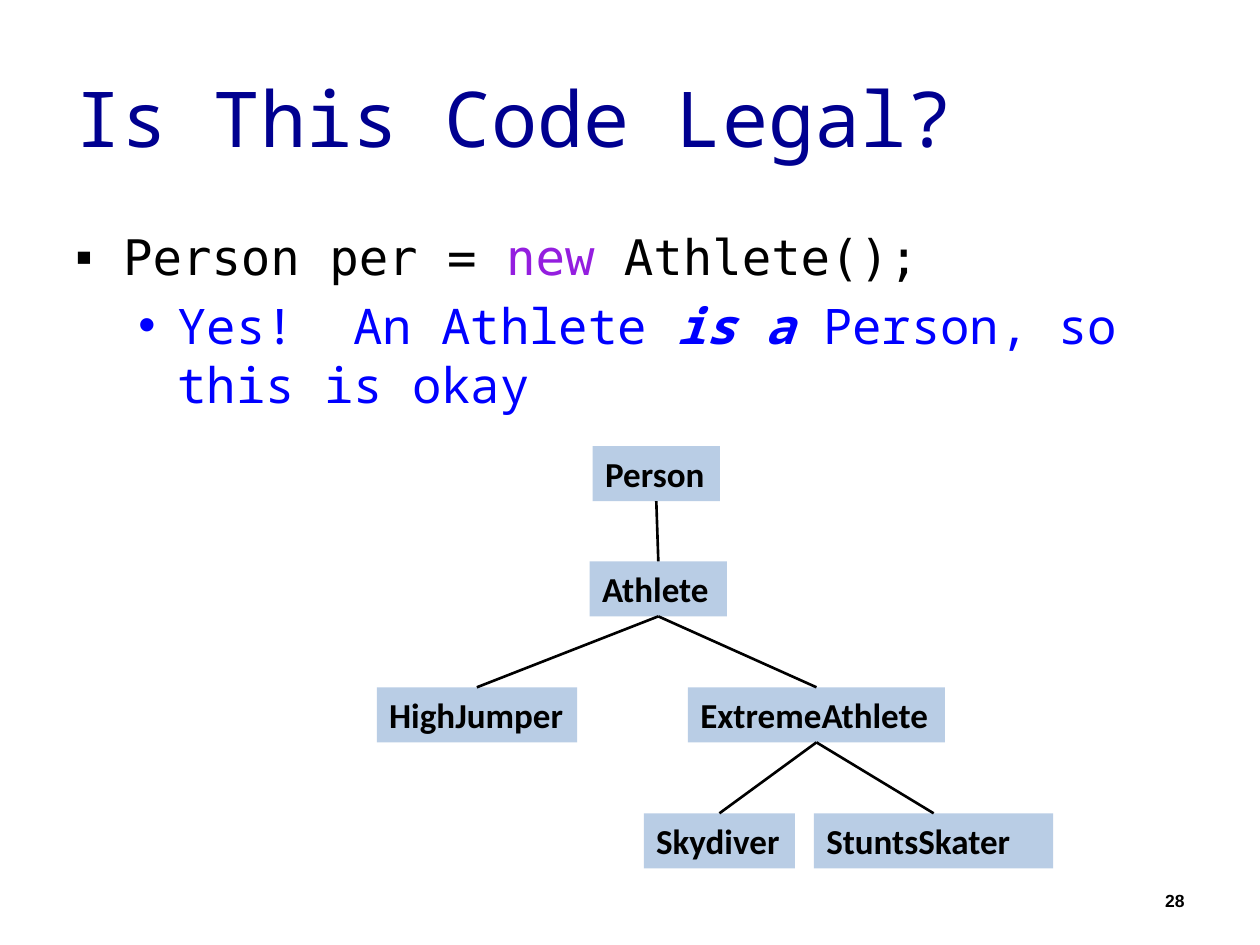
from typing import NamedTuple

from lxml.etree import SubElement
from pptx import Presentation
from pptx.dml.color import RGBColor
from pptx.enum.shapes import MSO_CONNECTOR as Connector, MSO_SHAPE as Shape
from pptx.enum.text import MSO_ANCHOR as Anchor, MSO_AUTO_SIZE as AutoSize, PP_ALIGN as Align
from pptx.oxml.ns import qn
from pptx.util import Inches, Pt

COLUMN = ROW = Inches(0.1)
BOX_ROWS = 4.37
CODE_FONT, ANSWER_FONT = "DejaVu Sans Mono", "Noto Sans Mono"
BLACK, NAVY, BLUE, PURPLE, PALE_BLUE = "000000", "000090", "0000FF", "941EDF", "B9CDE5"


class Area(NamedTuple):
    left: float
    top: float
    width: float
    height: float


class Span(NamedTuple):
    text: str
    size: float
    font: str
    color: str
    bold: bool = False
    italic: bool = False


class Bullet(NamedTuple):
    symbol: str
    margin: float
    hanging: float
    format: dict


class ClassBox(NamedTuple):
    name: str
    parent: str
    left: float
    top: float
    width: float


TITLE = Span("Is This Code Legal?", 44, ANSWER_FONT, NAVY)
NUMBER = Span("28", 10, "Arial", BLACK, True)
QUESTION = [
    Span("Person per = ", 28, CODE_FONT, BLACK),
    Span("new", 28, CODE_FONT, PURPLE),
    Span(" Athlete();", 28, CODE_FONT, BLACK),
]
ANSWER = [
    Span("Yes!  An Athlete ", 28, ANSWER_FONT, BLUE),
    Span("is a", 28, ANSWER_FONT, BLUE, True, True),
    Span(" Person, so this is okay", 28, ANSWER_FONT, BLUE),
]
BULLETS = [
    (Bullet("▪", 0.38, 0.38, {"space_before": Pt(12.2)}), QUESTION),
    (Bullet("•", 0.81, 0.31, {"level": 1, "space_before": Pt(5.6), "space_after": Pt(6)}), ANSWER),
]
HIERARCHY = [
    ClassBox("Person", "", 47.04, 35.4, 10.1),
    ClassBox("Athlete", "Person", 46.8, 44.55, 10.9),
    ClassBox("HighJumper", "Athlete", 29.9, 54.55, 15.9),
    ClassBox("ExtremeAthlete", "Athlete", 54.6, 54.55, 20.4),
    ClassBox("Skydiver", "ExtremeAthlete", 51.1, 64.55, 12),
    ClassBox("StuntsSkater", "ExtremeAthlete", 64.6, 64.55, 19),
]


def rgb(color: str) -> RGBColor:
    """Turn a hex string into a colour."""
    return RGBColor.from_string(color)


def apply_format(target, values: dict) -> None:
    """Set each named attribute on the target."""
    for name, value in values.items():
        setattr(target, name, value)


def place(area: Area) -> list:
    """Turn grid columns and rows into slide lengths."""
    return [round(cells * unit) for cells, unit in zip(area, (COLUMN, ROW) * 2)]


def write(paragraph, spans: list) -> None:
    """Add formatted runs to a paragraph."""
    for span in spans:
        run = paragraph.add_run()
        run.text = span.text
        apply_format(run.font, {"size": Pt(span.size), "name": span.font,
                                "bold": span.bold, "italic": span.italic})
        run.font.color.rgb = rgb(span.color)


def add_text(slide, area: Area, anchor: Anchor):
    """Add a wrapping text box and return its frame."""
    frame = slide.shapes.add_textbox(*place(area)).text_frame
    apply_format(frame, {"word_wrap": True, "vertical_anchor": anchor})
    return frame


def add_bullet(paragraph, bullet: Bullet) -> None:
    """Give a paragraph its spacing, hanging indent and bullet symbol."""
    apply_format(paragraph, bullet.format)
    properties = paragraph._p.get_or_add_pPr()
    properties.set("marL", str(Inches(bullet.margin)))
    properties.set("indent", str(-Inches(bullet.hanging)))
    SubElement(properties, qn("a:buFont")).set("typeface", "Arial")
    SubElement(properties, qn("a:buChar")).set("char", bullet.symbol)


def add_class(slide, box: ClassBox):
    """Draw one class of the hierarchy."""
    area = Area(box.left, box.top, box.width, BOX_ROWS)
    shape = slide.shapes.add_shape(Shape.RECTANGLE, *place(area))
    shape.shadow.inherit = False
    shape.fill.solid()
    shape.fill.fore_color.rgb = rgb(PALE_BLUE)
    shape.line.fill.background()
    frame = shape.text_frame
    apply_format(frame, {"word_wrap": False, "vertical_anchor": Anchor.TOP,
                         "auto_size": AutoSize.SHAPE_TO_FIT_TEXT})
    frame.paragraphs[0].alignment = Align.LEFT
    write(frame.paragraphs[0], [Span(box.name, 20, "Calibri", BLACK, True)])
    return shape


def join(slide, parent, child) -> None:
    """Connect the bottom of a parent to the top of its child."""
    connector = slide.shapes.add_connector(Connector.STRAIGHT, 0, 0, 0, 0)
    connector.begin_connect(parent, 2)
    connector.end_connect(child, 0)
    connector.line.color.rgb = rgb(BLACK)
    connector.line.width = Pt(1.5)
    SubElement(connector._element.spPr, qn("a:effectLst"))


def main() -> None:
    """Build and save the slide."""
    presentation = Presentation()
    apply_format(presentation, {"slide_width": 100 * COLUMN, "slide_height": 75 * ROW})
    slide = presentation.slides.add_slide(presentation.slide_layouts[6])

    write(add_text(slide, Area(5, 3, 90, 12.5), Anchor.MIDDLE).paragraphs[0], [TITLE])

    body = add_text(slide, Area(5, 17.5, 90, 49.5), Anchor.TOP)
    for index, (bullet, spans) in enumerate(BULLETS):
        paragraph = body.add_paragraph() if index else body.paragraphs[0]
        add_bullet(paragraph, bullet)
        write(paragraph, spans)

    number = add_text(slide, Area(71.7, 69.5, 23.3, 4), Anchor.MIDDLE).paragraphs[0]
    number.alignment = Align.RIGHT
    write(number, [NUMBER])

    shapes = {box.name: add_class(slide, box) for box in HIERARCHY}
    for box in HIERARCHY:
        if box.parent:
            join(slide, shapes[box.parent], shapes[box.name])

    presentation.save("out.pptx")


if __name__ == "__main__":
    main()
